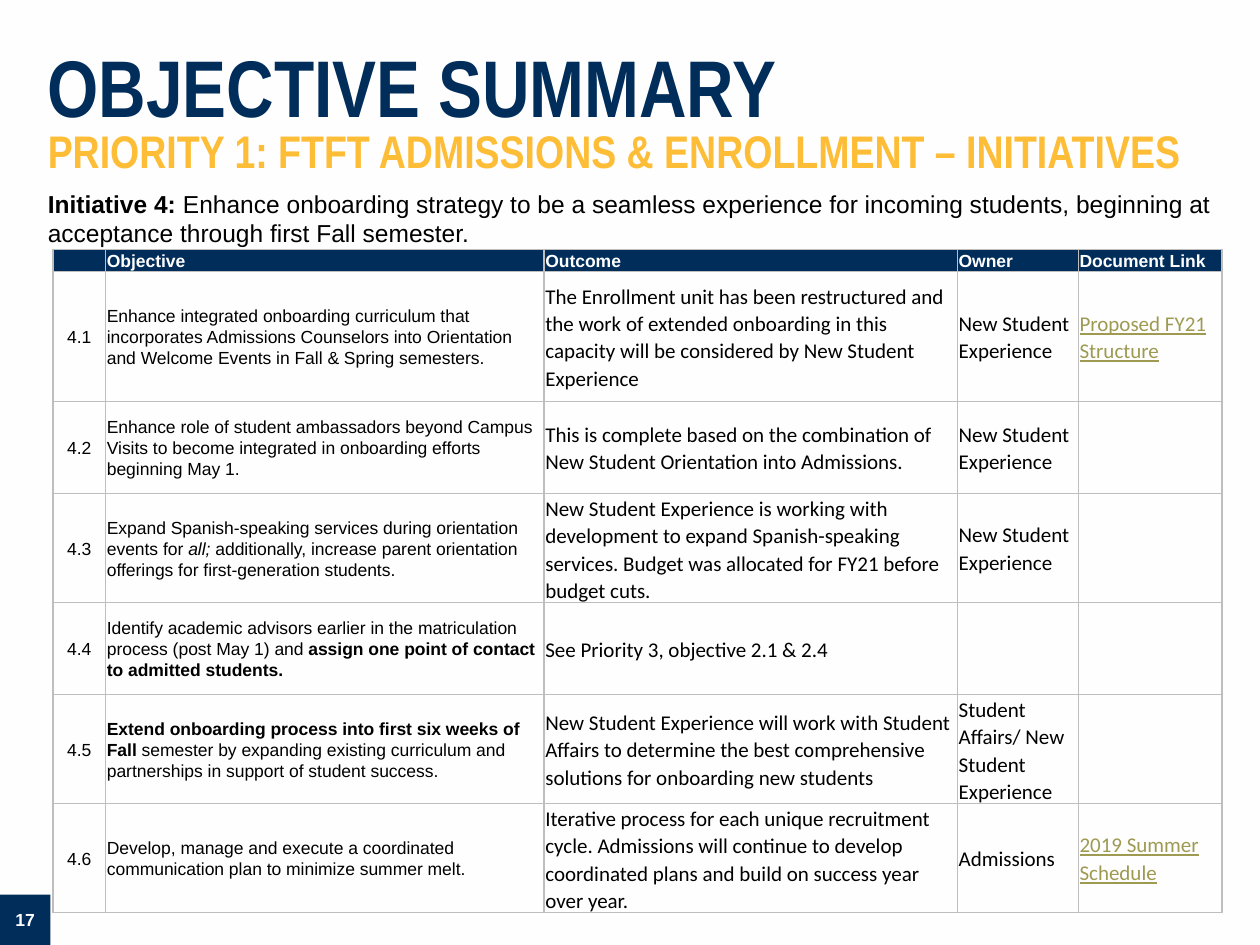
import dataclasses
import typing

import pptx
import pptx.dml.color
import pptx.enum.shapes
import pptx.enum.text
import pptx.oxml
import pptx.oxml.ns
import pptx.util

Pt = pptx.util.Pt
ALIGN = pptx.enum.text.PP_ALIGN
MIDDLE = pptx.enum.text.MSO_ANCHOR.MIDDLE

NAVY = "012D5B"
GOLD = "FEBD36"
OLIVE = "9E9A52"
BLACK = "000000"
WHITE = "FEFEFE"
GREY = "BEBEBE"


@dataclasses.dataclass(frozen=True)
class Span:
    text: str
    bold: bool = False
    italic: bool = False


@dataclasses.dataclass(frozen=True)
class Style:
    size: float
    font: str = "Arial"
    color: str = BLACK
    bold: bool = False
    underline: bool = False


@dataclasses.dataclass(frozen=True)
class Objective:
    number: str
    goal: tuple[Span, ...]
    outcome: str
    owner: str = ""
    document: str = ""


HEADING = Style(10, color=WHITE, bold=True)
PLAIN = Style(10)
RESULT = Style(12, "Calibri")
LINK = Style(12, "Calibri", OLIVE, underline=True)

HEADINGS = ("", "Objective", "Outcome", "Owner", "Document Link")
COLUMN_WIDTHS = (30.2, 250.6, 236.2, 69.1, 82.1)
ROW_HEIGHTS = (12.2, 74.2, 52.6, 49, 52.6, 52.6, 49)

OBJECTIVES = (
    Objective(
        "4.1",
        (Span("Enhance integrated onboarding curriculum that incorporates Admissions "
              "Counselors into Orientation and Welcome Events in Fall & Spring semesters."),),
        "The Enrollment unit has been restructured and the work of extended onboarding "
        "in this capacity will be considered by New Student Experience",
        "New Student Experience", "Proposed FY21 Structure"),
    Objective(
        "4.2",
        (Span("Enhance role of student ambassadors beyond Campus Visits to become "
              "integrated in onboarding efforts beginning May 1."),),
        "This is complete based on the combination of New Student Orientation into Admissions.",
        "New Student Experience"),
    Objective(
        "4.3",
        (Span("Expand Spanish-speaking services during orientation events for "),
         Span("all; ", italic=True),
         Span("additionally, increase parent orientation offerings for "
              "first-generation students.")),
        "New Student Experience is working with development to expand Spanish-speaking "
        "services. Budget was allocated for FY21 before budget cuts.",
        "New Student Experience"),
    Objective(
        "4.4",
        (Span("Identify academic advisors earlier in the matriculation process (post May 1) and "),
         Span("assign one point of contact to admitted students.", bold=True)),
        "See Priority 3, objective 2.1 & 2.4"),
    Objective(
        "4.5",
        (Span("Extend onboarding process into first six weeks of Fall ", bold=True),
         Span("semester by expanding existing curriculum and partnerships in support "
              "of student success.")),
        "New Student Experience will work with Student Affairs to determine the best "
        "comprehensive solutions for onboarding new students",
        "Student Affairs/ New Student Experience"),
    Objective(
        "4.6",
        (Span("Develop, manage and execute a coordinated communication plan to "
              "minimize summer melt."),),
        "Iterative process for each unique recruitment cycle. Admissions will continue to "
        "develop coordinated plans and build on success year over year.",
        "Admissions", "2019 Summer Schedule"),
)


def rgb(color: str) -> pptx.dml.color.RGBColor:
    return pptx.dml.color.RGBColor.from_string(color)


def add_span(paragraph: typing.Any, span: Span, style: Style) -> None:
    run = paragraph.add_run()
    run.text = span.text
    run.font.name = style.font
    run.font.size = Pt(style.size)
    run.font.color.rgb = rgb(style.color)
    run.font.bold = style.bold or span.bold
    run.font.italic = span.italic
    run.font.underline = style.underline


def add_text_box(slide: typing.Any, left: float, top: float,
                 width: float, height: float) -> typing.Any:
    frame = slide.shapes.add_textbox(Pt(left), Pt(top), Pt(width), Pt(height)).text_frame
    frame.word_wrap = True
    return frame


def draw_borders(cell: typing.Any) -> None:
    properties = cell._tc.get_or_add_tcPr()
    for position, side in enumerate(("lnL", "lnR", "lnT", "lnB")):
        border = pptx.oxml.parse_xml(
            f'<a:{side} {pptx.oxml.ns.nsdecls("a")} w="{Pt(1)}"><a:solidFill>'
            f'<a:srgbClr val="{GREY}"/></a:solidFill></a:{side}>')
        properties.insert(position, border)


def fill_cell(cell: typing.Any, spans: tuple[Span, ...], style: Style, fill: str,
              spacing: float, align: typing.Any = ALIGN.LEFT) -> None:
    cell.margin_left = cell.margin_right = cell.margin_top = Pt(0.7)
    cell.margin_bottom = Pt(0)
    cell.vertical_anchor = MIDDLE
    cell.fill.solid()
    cell.fill.fore_color.rgb = rgb(fill)
    draw_borders(cell)
    paragraph = cell.text_frame.paragraphs[0]
    paragraph.alignment = align
    paragraph.line_spacing = spacing
    for span in spans:
        add_span(paragraph, span, style)
    if not spans:
        ending = paragraph._p.get_or_add_endParaRPr()
        ending.set("sz", str(style.size * 100))


def spans_of(text: str) -> tuple[Span, ...]:
    return (Span(text),) if text else ()


def draw_objectives(slide: typing.Any) -> None:
    table = slide.shapes.add_table(
        len(ROW_HEIGHTS), len(COLUMN_WIDTHS), Pt(30.2), Pt(142.5),
        Pt(sum(COLUMN_WIDTHS)), Pt(sum(ROW_HEIGHTS))).table
    table.first_row = table.horz_banding = False
    for column, width in zip(table.columns, COLUMN_WIDTHS):
        column.width = Pt(width)
    for row, height in zip(table.rows, ROW_HEIGHTS):
        row.height = Pt(height)
    for column, heading in enumerate(HEADINGS):
        fill_cell(table.cell(0, column), spans_of(heading), HEADING, NAVY, 1)
    for row, objective in enumerate(OBJECTIVES, start=1):
        entries = (
            (spans_of(objective.number), PLAIN, ALIGN.CENTER),
            (objective.goal, PLAIN, ALIGN.LEFT),
            (spans_of(objective.outcome), RESULT, ALIGN.LEFT),
            (spans_of(objective.owner), RESULT, ALIGN.LEFT),
            (spans_of(objective.document), LINK, ALIGN.LEFT),
        )
        for column, (spans, style, align) in enumerate(entries):
            fill_cell(table.cell(row, column), spans, style, WHITE, 1.07, align)


def draw_page_number(slide: typing.Any) -> None:
    badge = slide.shapes.add_shape(
        pptx.enum.shapes.MSO_SHAPE.RECTANGLE, Pt(0), Pt(511.2), Pt(28.8), Pt(28.8))
    badge.shadow.inherit = False
    badge.fill.solid()
    badge.fill.fore_color.rgb = rgb(NAVY)
    badge.line.fill.background()
    frame = badge.text_frame
    frame.margin_left = frame.margin_right = Pt(0)
    frame.vertical_anchor = MIDDLE
    frame.paragraphs[0].alignment = ALIGN.CENTER
    add_span(frame.paragraphs[0], Span("17"), HEADING)


def draw_title(slide: typing.Any) -> None:
    frame = add_text_box(slide, 20.2, 22.3, 699.8, 88.6)
    frame.margin_left = frame.margin_right = Pt(7.2)
    frame.margin_top = frame.margin_bottom = Pt(7.2)
    frame.vertical_anchor = MIDDLE
    title = frame.paragraphs[0]
    title.line_spacing = 0.8
    add_span(title, Span("OBJECTIVE SUMMARY"), Style(45.9, "Arial Narrow", NAVY, True))
    title.add_line_break()
    add_span(title, Span("PRIORITY 1: FTFT ADMISSIONS & ENROLLMENT – INITIATIVES"),
             Style(26.1, "Arial Narrow", GOLD, True))


def draw_initiative(slide: typing.Any) -> None:
    initiative = add_text_box(slide, 20.2, 104.4, 680.4, 64.8).paragraphs[0]
    add_span(initiative, Span("Initiative 4: ", bold=True), Style(14))
    add_span(initiative, Span(
        "Enhance onboarding strategy to be a seamless experience for incoming students, "
        "beginning at acceptance through first Fall semester."), Style(14))


def main() -> None:
    deck = pptx.Presentation()
    deck.slide_width, deck.slide_height = Pt(720), Pt(540)
    slide = deck.slides.add_slide(deck.slide_layouts[6])
    slide.background.fill.solid()
    slide.background.fill.fore_color.rgb = rgb(WHITE)
    draw_page_number(slide)
    draw_title(slide)
    draw_initiative(slide)
    draw_objectives(slide)
    deck.save("out.pptx")


if __name__ == "__main__":
    main()
